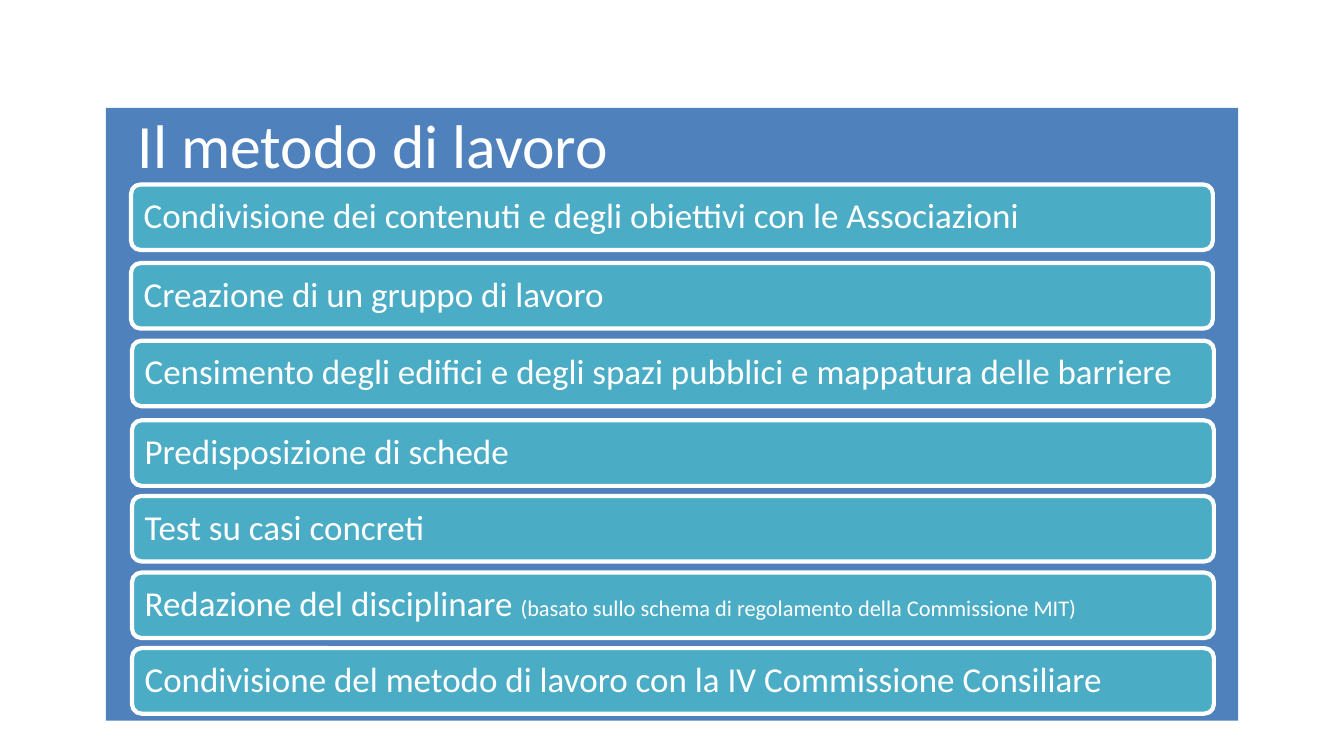
import pptx
import pptx.util
from pptx.dml.color import RGBColor
from pptx.enum.shapes import MSO_SHAPE
from pptx.enum.text import MSO_ANCHOR, PP_ALIGN
from pptx.util import Inches

# Content: each step has a left, a top and its runs of (text, size)
TITLE = [("Il metodo di lavoro", 44)]
STEPS = [
    (1.30, 1.83, [("Condivisione dei contenuti e degli obiettivi con le Associazioni", 25)]),
    (1.30, 2.61, [("Creazione di un gruppo di lavoro", 25)]),
    (1.31, 3.38, [("Censimento degli edifici e degli spazi pubblici e mappatura delle barriere", 25)]),
    (1.31, 4.17, [("Predisposizione di schede", 25)]),
    (1.31, 4.92, [("Test su casi concreti", 25)]),
    (1.31, 5.68, [("Redazione del disciplinare ", 25),
                  ("(basato sullo schema di regolamento della Commissione MIT)", 16)]),
    (1.31, 6.43, [("Condivisione del metodo di lavoro con la IV Commissione Consiliare", 25)]),
]

# Format
BLUE = RGBColor(0x4F, 0x81, 0xBD)
TEAL = RGBColor(0x4B, 0xAC, 0xC6)
WHITE = RGBColor(0xFF, 0xFF, 0xFF)
FONT = "Calibri"
PANEL_BOX = (1.05, 1.07, 11.23, 6.08)
TITLE_BOX = (1.27, 0.68, 10.73, 1.17)
STEP_WIDTH, STEP_HEIGHT = 10.73, 0.65
CORNER = 0.144


def add_block(slide, kind, box, fill):
    shape = slide.shapes.add_shape(kind, *map(Inches, box))
    shape.shadow.inherit = False
    shape.fill.solid()
    shape.fill.fore_color.rgb = fill
    return shape


def write_text(shape, runs, anchor, vertical_inset):
    frame_format = {
        "word_wrap": True,
        "vertical_anchor": anchor,
        "margin_left": Inches(0.1),
        "margin_right": Inches(0.1),
        "margin_top": Inches(vertical_inset),
        "margin_bottom": Inches(vertical_inset),
    }
    for name, value in frame_format.items():
        setattr(shape.text_frame, name, value)
    paragraph = shape.text_frame.paragraphs[0]
    paragraph.alignment = PP_ALIGN.LEFT
    paragraph.line_spacing = 0.9
    for text, size in runs:
        run = paragraph.add_run()
        run.text = text
        for name, value in {"name": FONT, "size": pptx.util.Pt(size)}.items():
            setattr(run.font, name, value)
        run.font.color.rgb = WHITE


def main():
    presentation = pptx.Presentation()
    presentation.slide_width = Inches(13.33)
    presentation.slide_height = Inches(7.5)
    slide = presentation.slides.add_slide(presentation.slide_layouts[6])

    # Panel and title
    panel = add_block(slide, MSO_SHAPE.RECTANGLE, PANEL_BOX, BLUE)
    panel.line.fill.background()
    title = slide.shapes.add_textbox(*map(Inches, TITLE_BOX))
    write_text(title, TITLE, MSO_ANCHOR.BOTTOM, 0.05)

    # Steps
    for left, top, runs in STEPS:
        box = (left, top, STEP_WIDTH, STEP_HEIGHT)
        step = add_block(slide, MSO_SHAPE.ROUNDED_RECTANGLE, box, TEAL)
        step.adjustments[0] = CORNER
        step.line.color.rgb = WHITE
        step.line.width = pptx.util.Pt(3)
        write_text(step, runs, MSO_ANCHOR.MIDDLE, 0.14)

    presentation.save("out.pptx")


if __name__ == "__main__":
    main()
